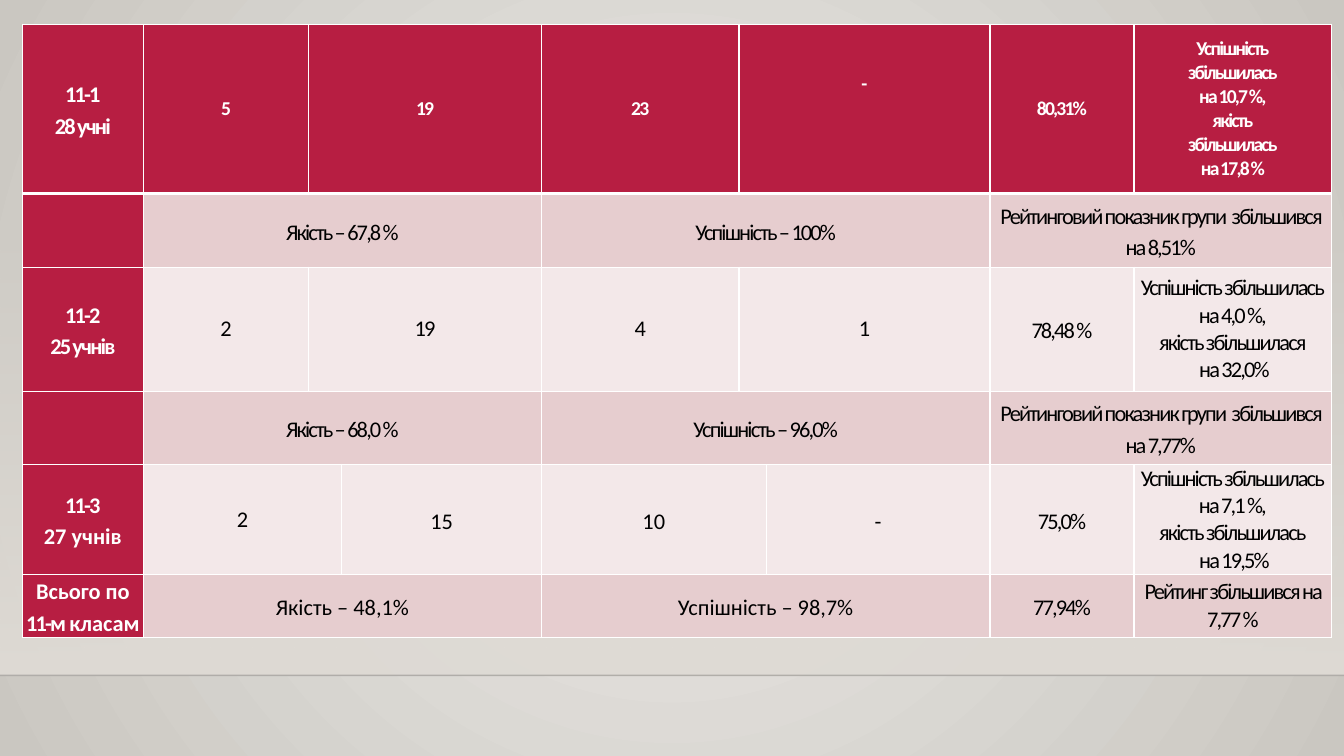
"""Build a one-slide table of class results for the 11th year."""
from dataclasses import dataclass

from lxml import etree
from pptx import Presentation
from pptx.dml.color import RGBColor
from pptx.enum.shapes import MSO_CONNECTOR, MSO_SHAPE
from pptx.enum.text import MSO_ANCHOR, PP_ALIGN
from pptx.oxml import parse_xml
from pptx.oxml.ns import nsdecls, qn
from pptx.util import Pt

CENTER = PP_ALIGN.CENTER
MIDDLE, TOP = MSO_ANCHOR.MIDDLE, MSO_ANCHOR.TOP
RECTANGLE, STRAIGHT = MSO_SHAPE.RECTANGLE, MSO_CONNECTOR.STRAIGHT

WIDTH, HEIGHT = 960, 540
FLOOR_TOP = 482.4
FONT = "Calibri"
COLORS = {
    "glow": "ECEAE7", "edge": "CAC7C1", "wall": "DFDBD5", "floor": "000001",
    "head": "B71E42", "band": "E6CDCF", "light": "F3E8E9",
    "white": "FFFFFF", "black": "000000",
}
COLUMN_WIDTHS = [86.4, 118.08, 23.76, 142.56, 141.12, 19.44, 159.84, 102.96, 141.12]
ROW_HEIGHTS = [120.96, 52.56, 88.56, 52.56, 30.24, 30.24]
TIGHT = -130


@dataclass
class Entry:
    """Table entry; "|" parts runs and "~" marks a run with normal tracking."""
    column: int
    text: str
    width: int = 1
    leading: float = 1.15
    top: float = 0


def summary(quality, success):
    """Return the two wide entries of a summary row."""
    return [Entry(1, quality, 3), Entry(4, success, 3)]


def rating(value):
    """Return the wide rating entry that closes a class."""
    return Entry(7, f"Рейтинговий показник групи  збільшився на {value}", 2)


ROWS = [
    [Entry(0, "11-1\n28 учні"), Entry(1, "5", 1, 1), Entry(2, "19", 2, 1),
     Entry(4, "23", 1, 1), Entry(5, "-", 2, 1, 34.2), Entry(7, "80,31%", 1, 1),
     Entry(8, "Успішність\nзбільшилась\nна 10,7 %,\nякість\nзбільшилась\nна 17,8 %", 1, 1)],
    [Entry(0, "")] + summary("Якість – 67,8 %", "Успішність – 100%") + [rating("8,51%")],
    [Entry(0, "11-2\n25 учнів"), Entry(1, "2", 1, 1), Entry(2, "19", 2, 1),
     Entry(4, "4", 1, 1), Entry(5, "1", 2, 1), Entry(7, "78,48 %"),
     Entry(8, "Успішність збільшилась\nна 4,0 %,\nякість збільшилася\n на 32,0%", 1, 1)],
    [Entry(0, "")] + summary("Якість – 68,0 %", "Успішність – 96,0%") + [rating("7,77%")],
    [Entry(0, "11-3\n~27 учнів"), Entry(1, "~2", 2, 1), Entry(3, "~15"),
     Entry(4, "~10", 2), Entry(6, "~-"), Entry(7, "75,0%"),
     Entry(8, "Успішність збільшилась\nна 7,1 %,\nякість збільшилась\n на 19,5%", 1, 1)],
    [Entry(0, "~Всього по |11-м |~класам")]
    + summary("~Якість – 48,1%", "~Успішність – 98,7%")
    + [Entry(7, "77,94%"), Entry(8, "Рейтинг збільшився на 7,77 %", 1, 1)],
]


def gradient(stops, direction):
    """Return a gradient fill made of (position, colour, opacity) stops."""
    marks = "".join(
        f'<a:gs pos="{position * 1000}"><a:srgbClr val="{COLORS[color]}">'
        f'<a:alpha val="{opacity * 1000}"/></a:srgbClr></a:gs>'
        for position, color, opacity in stops)
    return parse_xml(f'<a:gradFill {nsdecls("a")} rotWithShape="1">'
                     f'<a:gsLst>{marks}</a:gsLst>{direction}</a:gradFill>')


def replace_fill(fill, holder, element):
    """Swap the fill of a holder for the given gradient."""
    fill.gradient()
    holder.replace(holder.find(qn("a:gradFill")), element)


def draw_backdrop(page):
    """Draw the round glow, the wall and the floor line."""
    fill = page.background.fill
    fill.solid()
    holder = page._element.cSld.find(qn("p:bg")).find(qn("p:bgPr"))
    replace_fill(fill, holder, gradient(
        [(0, "glow", 100), (100, "edge", 100)],
        '<a:path path="circle"><a:fillToRect l="50000" t="50000" r="50000" b="50000"/></a:path>'))

    wall = page.shapes.add_shape(RECTANGLE, 0, Pt(159.1), Pt(WIDTH), Pt(FLOOR_TOP - 159.1))
    wall.shadow.inherit = False
    wall.line.fill.background()
    replace_fill(wall.fill, wall._element.spPr, gradient(
        [(0, "wall", 0), (100, "wall", 100)], '<a:lin ang="5400000" scaled="0"/>'))

    line = page.shapes.add_connector(STRAIGHT, 0, Pt(FLOOR_TOP), Pt(WIDTH), Pt(FLOOR_TOP))
    line.line.width = Pt(1)
    line.line.color.rgb = RGBColor.from_string(COLORS["floor"])
    color = line._element.spPr.find(".//" + qn("a:srgbClr"))
    etree.SubElement(color, qn("a:alpha"), val="20000")
    etree.SubElement(line._element.spPr, qn("a:effectLst"))


def style_cell(cell, color, bottom):
    """Give a cell its white borders, fill and margins."""
    cell.margin_left = cell.margin_right = Pt(2.16)
    cell.margin_top = cell.margin_bottom = 0
    properties = cell._tc.get_or_add_tcPr()
    for side, width in (("L", 1), ("R", 1), ("T", 1), ("B", bottom)):
        border = etree.SubElement(properties, qn(f"a:ln{side}"), w=str(Pt(width)))
        paint = etree.SubElement(border, qn("a:solidFill"))
        etree.SubElement(paint, qn("a:srgbClr"), val=COLORS["white"])
    cell.fill.solid()
    cell.fill.fore_color.rgb = RGBColor.from_string(COLORS[color])


def write_entry(cell, entry, size, strong):
    """Write the paragraphs and runs of an entry into its cell."""
    cell.vertical_anchor = TOP if entry.top else MIDDLE
    cell.margin_top = Pt(entry.top)
    frame = cell.text_frame
    frame.text = entry.text
    for para in frame.paragraphs:
        para.alignment = CENTER
        para.line_spacing = entry.leading
        parts = para.text.split("|") if para.text else []
        para.clear()
        for part in parts:
            span = para.add_run()
            span.text = part.removeprefix("~")
            span.font.name = FONT
            span.font.size = Pt(size)
            span.font.bold = strong
            span.font.color.rgb = RGBColor.from_string(COLORS["white" if strong else "black"])
            span._r.get_or_add_rPr().set("spc", "0" if part.startswith("~") else str(TIGHT))


def draw_results(page):
    """Draw the table of class results."""
    frame = page.shapes.add_table(len(ROW_HEIGHTS), len(COLUMN_WIDTHS), Pt(16), Pt(17.28),
                                  Pt(sum(COLUMN_WIDTHS)), Pt(sum(ROW_HEIGHTS)))
    table = frame.table
    table.first_row = table.horz_banding = False
    for column, width in zip(table.columns, COLUMN_WIDTHS):
        column.width = Pt(width)
    for index, entries in enumerate(ROWS):
        table.rows[index].height = Pt(ROW_HEIGHTS[index])
        for column in range(len(COLUMN_WIDTHS)):
            body = "band" if index % 2 else "light"
            color = "head" if index == 0 or column == 0 else body
            style_cell(table.cell(index, column), color, 1 if index else 3)
        for entry in entries:
            cell = table.cell(index, entry.column)
            if entry.width > 1:
                cell.merge(table.cell(index, entry.column + entry.width - 1))
            size = 14 if index == 0 and entry.column else 16
            write_entry(cell, entry, size, index == 0 or entry.column == 0)


def main():
    """Build and save the deck."""
    deck = Presentation()
    deck.slide_width, deck.slide_height = Pt(WIDTH), Pt(HEIGHT)
    page = deck.slides.add_slide(deck.slide_layouts[6])
    draw_backdrop(page)
    draw_results(page)
    deck.save("out.pptx")


if __name__ == "__main__":
    main()
